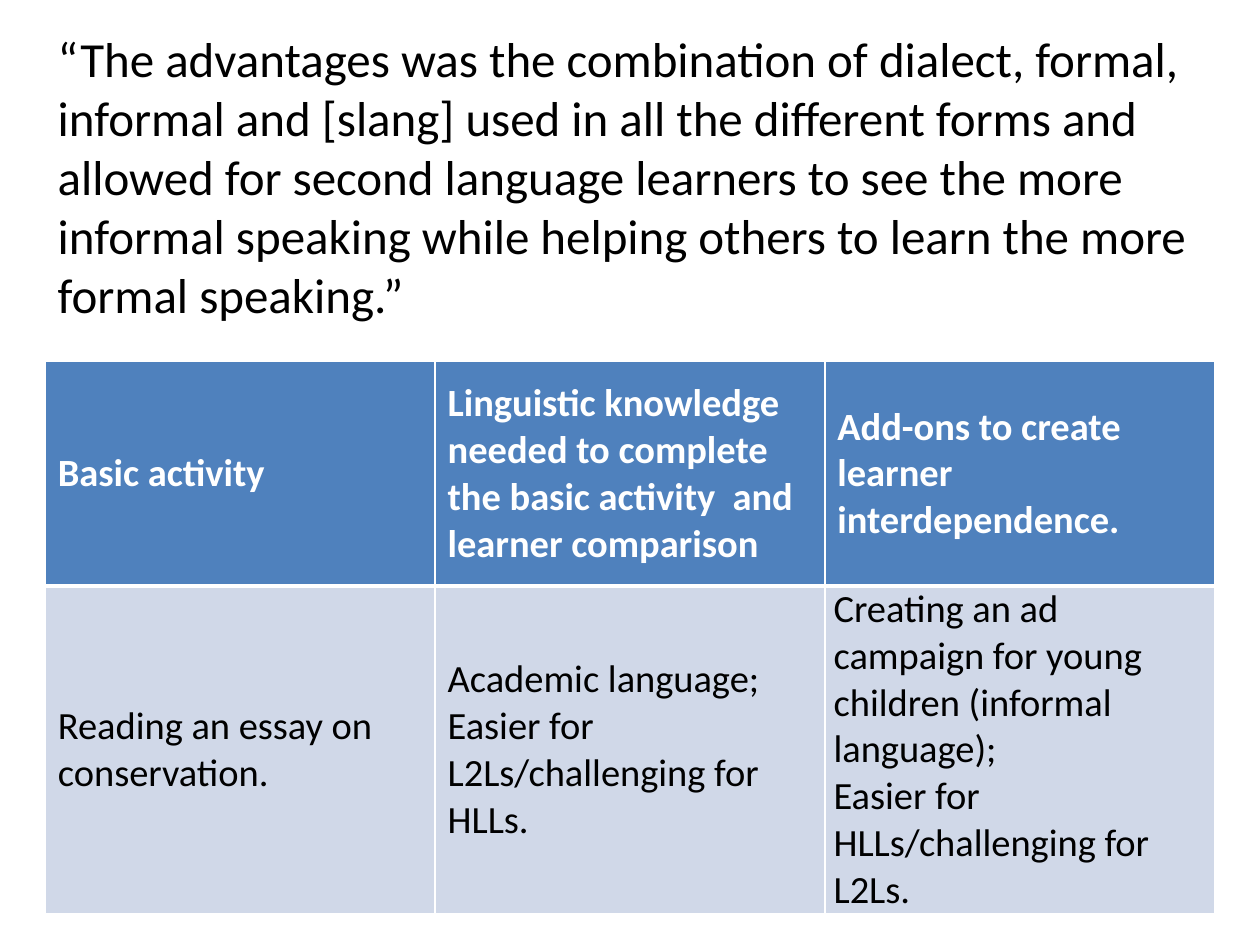
from lxml import etree
from pptx import Presentation
from pptx import util as u
from pptx.dml.color import RGBColor
from pptx.enum import text
from pptx.oxml import ns

WHITE = RGBColor(0xFF, 0xFF, 0xFF)
BLACK = RGBColor(0, 0, 0)
HEADER_BLUE = RGBColor(0x4F, 0x81, 0xBD)
BODY_BLUE = RGBColor(0xD0, 0xD8, 0xE8)

WIDTH, HEIGHT = u.Inches(10), u.Inches(7.5)
MARGIN = u.Inches(0.36)
ROW_HEIGHTS = (1.78, 2.42)

QUOTE = (
    "“The advantages was the combination of dialect, formal, informal and "
    "[slang] used in all the different forms and allowed for second language "
    "learners to see the more informal speaking while helping others to learn "
    "the more formal speaking.”"
)
HEADINGS = (
    ["Basic activity"],
    ["Linguistic knowledge needed to complete the basic activity  and "
     "learner comparison"],
    ["Add-ons to create learner interdependence."],
)
EXAMPLE = (
    ["Reading an essay on conservation."],
    ["Academic language;", "Easier for L2Ls/challenging for HLLs."],
    ["Creating an ad campaign for young children (informal language);",
     "Easier for HLLs/challenging for L2Ls."],
)


def write(frame, lines, size=22, color=BLACK, bold=False):
    frame.word_wrap = True
    for index, line in enumerate(lines):
        paragraph = frame.paragraphs[0] if index == 0 else frame.add_paragraph()
        run = paragraph.add_run()
        run.text = line
        run.font.name = "Calibri"
        run.font.size = u.Pt(size)
        run.font.bold = bold
        run.font.color.rgb = color


def set_borders(cell, bottom):
    """Rule the cell in white: 1 pt, and the given points at the bottom."""
    properties = cell._tc.get_or_add_tcPr()
    for side, points in (("L", 1), ("R", 1), ("T", 1), ("B", bottom)):
        line = etree.SubElement(properties, ns.qn(f"a:ln{side}"),
                                w=str(u.Pt(points)))
        fill = etree.SubElement(line, ns.qn("a:solidFill"))
        etree.SubElement(fill, ns.qn("a:srgbClr"), val=str(WHITE))


def add_quote(slide, left, top, width, height):
    frame = slide.shapes.add_textbox(left, top, width, height).text_frame
    write(frame, [QUOTE], size=28)
    frame.auto_size = text.MSO_AUTO_SIZE.SHAPE_TO_FIT_TEXT


def add_activity_table(slide, left, top, width, height):
    table = slide.shapes.add_table(2, len(HEADINGS), left, top, width, height).table
    for row, share in zip(table.rows, ROW_HEIGHTS):
        row.height = int(height * share / sum(ROW_HEIGHTS))

    rows = (
        (HEADINGS, HEADER_BLUE, WHITE, True, 3),
        (EXAMPLE, BODY_BLUE, BLACK, False, 1),
    )
    for r, (entries, fill, color, bold, bottom) in enumerate(rows):
        for c, lines in enumerate(entries):
            cell = table.cell(r, c)
            write(cell.text_frame, lines, color=color, bold=bold)
            cell.vertical_anchor = text.MSO_ANCHOR.MIDDLE
            set_borders(cell, bottom)
            cell.fill.solid()
            cell.fill.fore_color.rgb = fill

    add_ons = table.cell(1, 2)
    add_ons.margin_left = add_ons.margin_right = u.Inches(0.07)
    add_ons.margin_top = add_ons.margin_bottom = 0


def main():
    deck = Presentation()
    deck.slide_width, deck.slide_height = WIDTH, HEIGHT
    slide = deck.slides.add_slide(deck.slide_layouts.get_by_name("Blank"))
    content_width = WIDTH - 2 * MARGIN
    add_activity_table(slide, MARGIN, u.Inches(2.87), content_width,
                       u.Inches(sum(ROW_HEIGHTS)))
    add_quote(slide, MARGIN, MARGIN // 2, content_width, u.Inches(2.46))
    deck.save("out.pptx")


if __name__ == "__main__":
    main()
